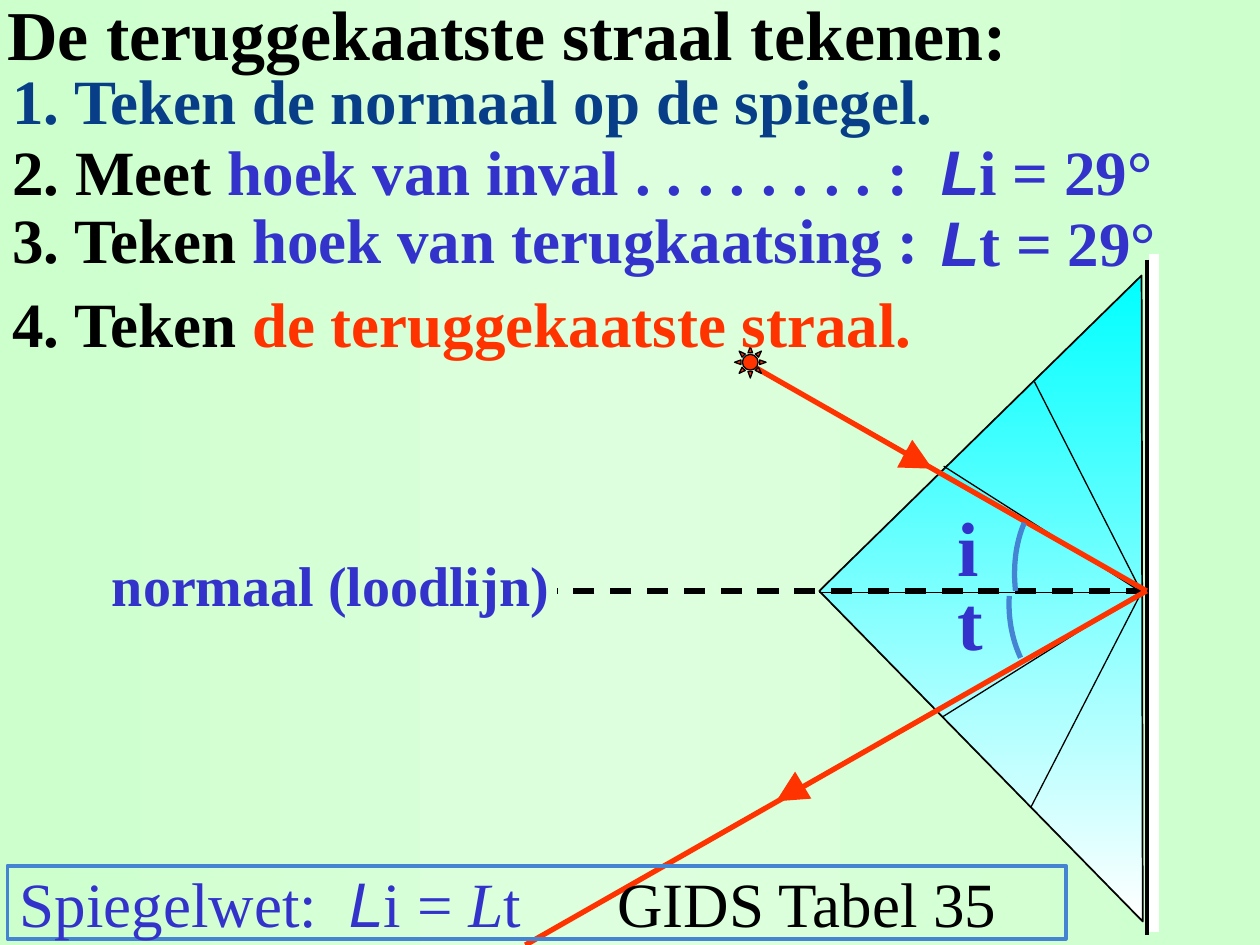
from copy import deepcopy

from lxml.etree import SubElement
from pptx import Presentation
from pptx.dml.color import RGBColor
from pptx.enum.dml import MSO_LINE
from pptx.enum.shapes import MSO_CONNECTOR, MSO_SHAPE
from pptx.enum.text import MSO_ANCHOR, PP_ALIGN
from pptx.oxml.ns import qn
from pptx.util import Inches, Pt

WIDTH, HEIGHT = 10, 7.5
BLACK, WHITE, NAVY, BLUE = "000000", "FFFFFF", "073E87", "3333CC"
RED, STEEL, CYAN = "FF3300", "4584D3", "00FFFF"
SERIF, SANS = "Times New Roman", "Arial"

MIRROR_POINT = (9.1, 4.69)
FAN_CENTRE = (9.06, 4.7)
FAN_BOX = (7.23, 2.96, 3.67, 3.58)
FAN_TIPS = [(6.5, 4.7), (7.49, 3.7), (8.21, 3.03), (7.48, 5.69), (8.18, 6.41)]
MIRROR_LINES = [(9.1, 2.06, 7.42, BLACK, 2.25), (9.16, 2.02, 7.4, WHITE, 6)]
RAYS = [
    ((6, 2.92), MIRROR_POINT, (7.18, 3.6), (7.4, 3.72)),
    (MIRROR_POINT, (4.17, HEIGHT), (6.36, 6.24), (6.16, 6.36)),
]
ANGLE_ARCS = [
    [(8.13, 4.15), (8.06, 4.31), (8.04, 4.5), (8.06, 4.69)],
    [(8.01, 4.73), (8, 4.9), (8.03, 5.07), (8.1, 5.22)],
]
SUN_BOX = (5.83, 2.75, 0.25, 0.25)
LAW_BOX = (0.06, 6.87, 8.4, 0.58)


def angle(letter):
    return [("L", BLUE, SANS, True), (letter + " = 29°", BLUE)]


TEXTS = [
    ((-0.04, 0.05, 10, 0.42), 40, True, [("De teruggekaatste straal tekenen:", BLACK)]),
    ((0, 0.58, 10, 0.42), 36, True, [("1. Teken de normaal op de spiegel.", NAVY)]),
    ((0, 1.06, 8.42, 0.58), 36, True,
     [("2. Meet ", BLACK), ("hoek van inval . . . . . . . . :", BLUE)]),
    ((7.37, 1.06, 2.63, 0.58), 36, True, angle("i")),
    ((0, 1.56, 8.42, 0.67), 36, True,
     [("3. Teken ", BLACK), ("hoek van terugkaatsing :", BLUE)]),
    ((7.37, 1.58, 2.63, 0.67), 36, True, angle("t")),
    ((0, 2.22, 10, 0.67), 36, True,
     [("4. Teken ", BLACK), ("de teruggekaatste straal.", RED)]),
    ((0.79, 4.3, 4, 0.67), 32, True, [("normaal (loodlijn)", BLUE)]),
    ((7.5, 3.92, 0.5, 0.83), 44, True, [("i", BLUE)]),
    ((7.5, 4.5, 0.5, 0.83), 44, True, [("t", BLUE)]),
    ((4.8, 6.87, 3.66, 0.58), 36, False, [("GIDS Tabel 35", BLACK)]),
]
LAW_RUNS = [
    ("Spiegelwet:  ", BLUE), ("L", BLUE, SANS, True), ("i = ", BLUE),
    ("L", BLUE, SERIF, True), ("t", BLUE),
]


def colour(value):
    return RGBColor.from_string(value)


def box(lengths):
    return [Inches(length) for length in lengths]


def style_line(shape, value, width):
    shape.line.color.rgb = colour(value)
    shape.line.width = Pt(width)


def add_line(slide, start, end, value, width, dashed=False, arrow=False):
    line = slide.shapes.add_connector(MSO_CONNECTOR.STRAIGHT, *box(start + end))
    style_line(line, value, width)
    if dashed:
        line.line.dash_style = MSO_LINE.DASH
    if arrow:
        SubElement(line.line._get_or_add_ln(), qn("a:tailEnd"), type="triangle")
    SubElement(line._element.spPr, qn("a:effectLst"))


def add_preset(slide, kind, lengths, value, width):
    shape = slide.shapes.add_shape(kind, *box(lengths))
    shape.shadow.inherit = False
    style_line(shape, value, width)
    return shape


def add_run(paragraph, size, bold, text, value, font_name=SERIF, italic=False):
    run = paragraph.add_run()
    run.text = text
    run.font.name = font_name
    run.font.size = Pt(size)
    run.font.bold = bold
    run.font.italic = italic
    run.font.color.rgb = colour(value)


def write(shape, size, bold, runs):
    frame = shape.text_frame
    frame.word_wrap = True
    frame.vertical_anchor = MSO_ANCHOR.MIDDLE
    paragraph = frame.paragraphs[0]
    paragraph.alignment = PP_ALIGN.LEFT
    for run in runs:
        add_run(paragraph, size, bold, *run)


def add_arc(slide, controls, steps=16):
    points = []
    for step in range(steps + 1):
        t = step / steps
        weights = ((1 - t) ** 3, 3 * t * (1 - t) ** 2, 3 * t * t * (1 - t), t ** 3)
        points.append(tuple(Inches(sum(w * point[axis] for w, point in zip(weights, controls)))
                            for axis in (0, 1)))
    builder = slide.shapes.build_freeform(*points[0])
    builder.add_line_segments(points[1:], close=False)
    arc = builder.convert_to_shape()
    arc.shadow.inherit = False
    arc.fill.background()
    style_line(arc, STEEL, 3)


def set_stops(fill, stops):
    for stop, (position, value) in zip(fill.gradient_stops, stops):
        stop.position = position
        stop.color.rgb = colour(value)


def paint_background(slide):
    fill = slide.background.fill
    fill.gradient()
    fill.gradient_angle = 0
    stop_list = next(slide._element.iter(qn("a:gsLst")))
    stop_list.append(deepcopy(stop_list[-1]))
    set_stops(fill, [(0, "CCFFCC"), (0.5, "DEFFDE"), (1, "CCFFCC")])


def add_fan(slide):
    fan = add_preset(slide, MSO_SHAPE.RIGHT_TRIANGLE, FAN_BOX, BLACK, 1)
    fan.rotation = 45.6
    fan.fill.gradient()
    fan.fill.gradient_angle = 270
    set_stops(fan.fill, [(0, CYAN), (1, WHITE)])
    fan._element.spPr.find(qn("a:gradFill")).set("rotWithShape", "0")
    for tip in FAN_TIPS:
        add_line(slide, FAN_CENTRE, tip, BLACK, 0.75)


def main():
    presentation = Presentation()
    presentation.slide_width, presentation.slide_height = Inches(WIDTH), Inches(HEIGHT)
    slide = presentation.slides.add_slide(presentation.slide_layouts[6])
    paint_background(slide)
    add_fan(slide)
    for x, top, bottom, value, width in MIRROR_LINES:
        add_line(slide, (x, top), (x, bottom), value, width)
    add_line(slide, MIRROR_POINT, (4.42, MIRROR_POINT[1]), BLACK, 3, dashed=True)
    for start, end, arrow_start, arrow_end in RAYS:
        add_line(slide, start, end, RED, 3)
        add_line(slide, arrow_start, arrow_end, RED, 6, arrow=True)
    for controls in ANGLE_ARCS:
        add_arc(slide, controls)
    sun = add_preset(slide, MSO_SHAPE.SUN, SUN_BOX, BLACK, 0.75)
    sun.fill.solid()
    sun.fill.fore_color.rgb = colour(RED)
    law = add_preset(slide, MSO_SHAPE.RECTANGLE, LAW_BOX, STEEL, 2.25)
    law.fill.background()
    write(law, 36, False, LAW_RUNS)
    for lengths, size, bold, runs in TEXTS:
        write(slide.shapes.add_textbox(*box(lengths)), size, bold, runs)
    presentation.save("out.pptx")


if __name__ == "__main__":
    main()
